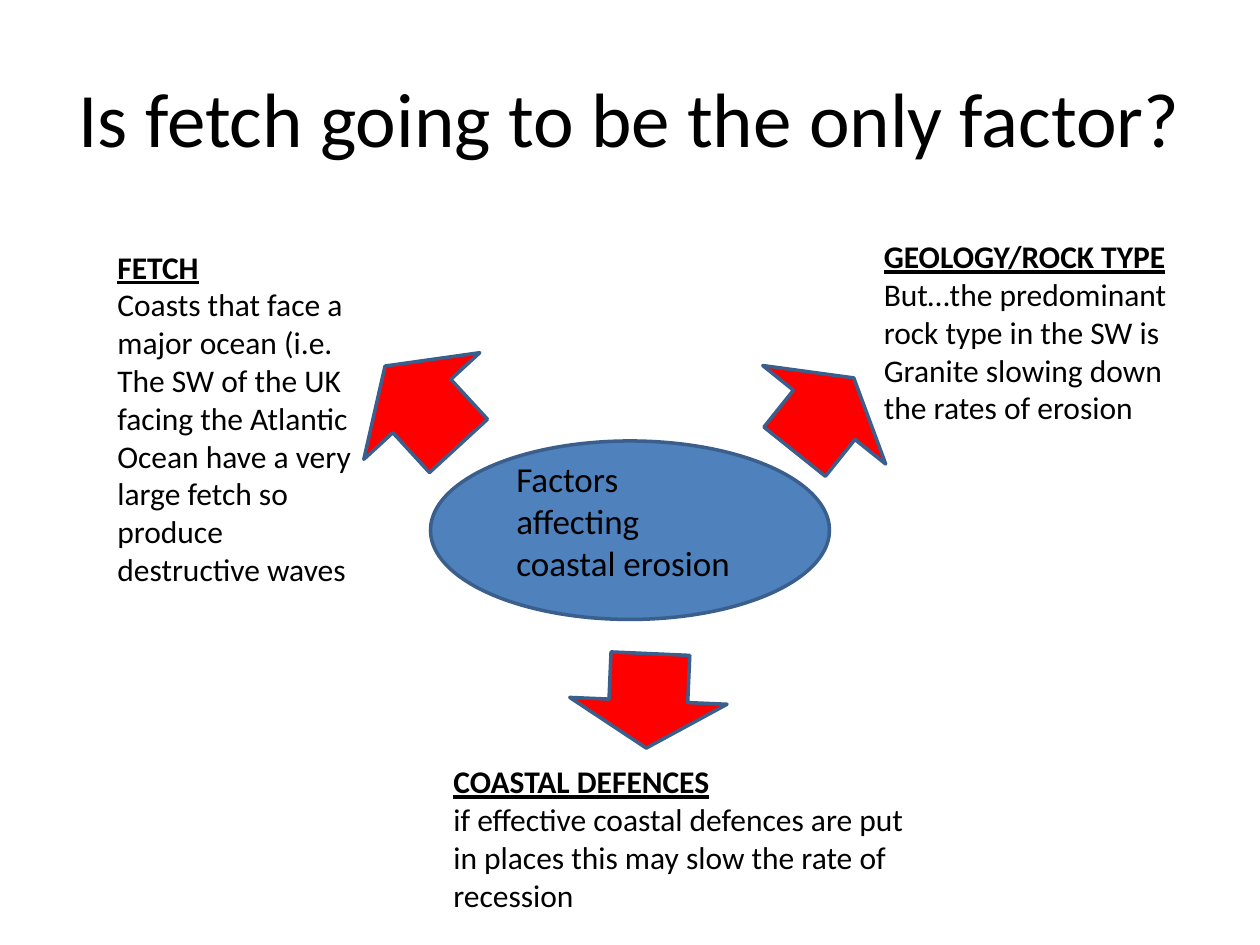
from pptx import Presentation
from pptx.util import Pt
from pptx.dml.color import RGBColor
from pptx.enum.shapes import MSO_SHAPE
from pptx.enum.text import MSO_ANCHOR, PP_ALIGN

# Content: boxes are left, top, width, height in points
COLORS = {"ink": "000000", "oval": "4F81BD", "arrow": "FF0000", "edge": "3A5F8C"}
PLAIN = {"bold": False, "underline": False}
HEAD = {"bold": True, "underline": True}

TITLE = ("Is fetch going to be the only factor?", (36, 21.6, 648, 90))
HUB = ("Factors affecting coastal erosion", (288, 258, 144, 80))
OVAL = (246, 252, 228, 102)
ARROWS = [  # box, rotation
    ((426, 210, 90, 54), 218.7),
    ((325.5, 373.5, 90, 54), 2.5),
    ((196, 201, 90, 62), 137.4),
]
NOTES = [  # heading, body, box
    ("FETCH",
     "Coasts that face a major ocean (i.e. The SW of the UK facing the Atlantic "
     "Ocean have a very large fetch so produce destructive waves",
     (60, 138, 150, 204)),
    ("GEOLOGY/ROCK TYPE",
     "But…the predominant rock type in the SW is Granite slowing down the rates "
     "of erosion",
     (498, 132, 186, 117)),
    ("COASTAL DEFENCES",
     "if effective coastal defences are put in places this may slow the rate of "
     "recession",
     (252, 432, 282, 94)),
]


def color(name):
    return RGBColor.from_string(COLORS[name])


def place(box):
    return [Pt(n) for n in box]


def add_text(slide, box, lines, size, align=PP_ALIGN.LEFT, anchor=MSO_ANCHOR.TOP):
    frame = slide.shapes.add_textbox(*place(box)).text_frame
    frame.word_wrap = True
    frame.vertical_anchor = anchor
    for i, (text, style) in enumerate(lines):
        para = frame.add_paragraph() if i else frame.paragraphs[0]
        para.alignment = align
        run = para.add_run()
        run.text = text
        look = {"name": "Calibri", "size": Pt(size), **style}
        for key, value in look.items():
            setattr(run.font, key, value)
        run.font.color.rgb = color("ink")


def add_form(slide, kind, box, fill, turn=0):
    form = slide.shapes.add_shape(kind, *place(box))
    form.rotation = turn
    form.shadow.inherit = False
    form.fill.solid()
    form.fill.fore_color.rgb = color(fill)
    form.line.color.rgb = color("edge")
    form.line.width = Pt(2)


def main():
    deck = Presentation()
    deck.slide_width, deck.slide_height = Pt(720), Pt(540)
    slide = deck.slides.add_slide(deck.slide_layouts[6])

    # Title
    text, box = TITLE
    add_text(slide, box, [(text, PLAIN)], 44, PP_ALIGN.CENTER, MSO_ANCHOR.MIDDLE)

    # Central oval and its label
    add_form(slide, MSO_SHAPE.OVAL, OVAL, "oval")
    text, box = HUB
    add_text(slide, box, [(text, PLAIN)], 20)

    # Arrows from the oval to each factor
    for box, turn in ARROWS:
        add_form(slide, MSO_SHAPE.DOWN_ARROW, box, "arrow", turn)

    # Factor notes
    for head, body, box in NOTES:
        add_text(slide, box, [(head, HEAD), (body, PLAIN)], 18)

    deck.save("out.pptx")


if __name__ == "__main__":
    main()
